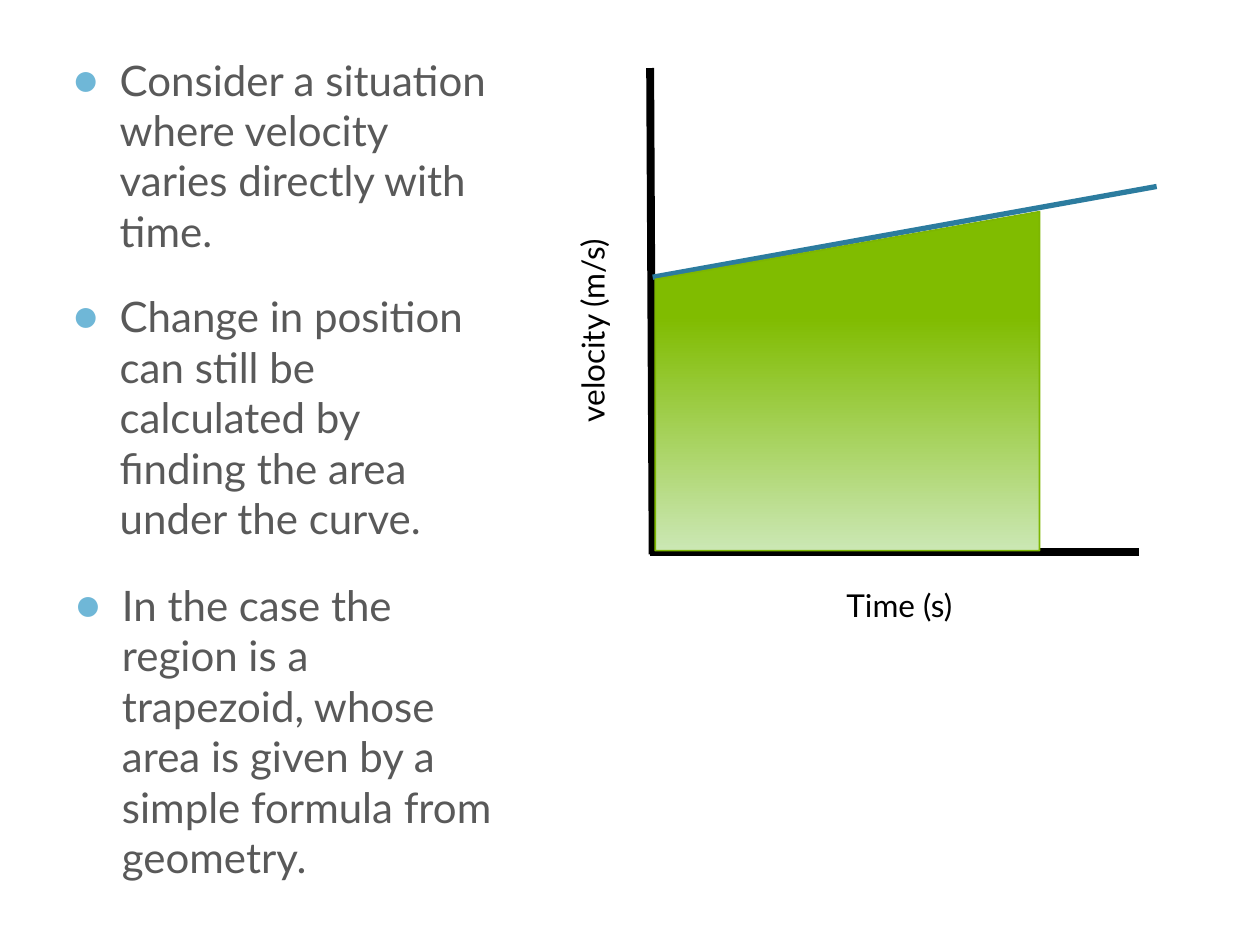
from dataclasses import dataclass

import pptx
import pptx.dml.color
import pptx.enum.shapes
import pptx.enum.text
import pptx.oxml
import pptx.oxml.ns
import pptx.util
from pptx.util import Inches


@dataclass(frozen=True)
class Theme:
    font: str = "Lato"
    body_size: int = 24
    label_size: int = 18
    body: str = "595959"
    bullet: str = "6FB7D7"
    axis: str = "000000"
    curve: str = "2C7C9F"
    area_top: str = "80BC00"
    area_bottom: str = "CBE7B4"
    area_edge: str = "7DB602"


THEME = Theme()

POINTS = [
    "Consider a situation where velocity varies directly with time.",
    "Change in position can still be calculated by finding the area under the curve.",
]
CONCLUSION = (
    "In the case the region is a trapezoid, whose area is given by "
    "a simple formula from geometry."
)


def rgb(value):
    return pptx.dml.color.RGBColor.from_string(value)


def write(paragraph, text, *, size, color, space_before=0):
    paragraph.space_before = pptx.util.Pt(space_before)
    run = paragraph.add_run()
    run.text = text
    run.font.name = THEME.font
    run.font.size = pptx.util.Pt(size)
    run.font.color.rgb = rgb(color)


def add_bullet(paragraph):
    """Give the paragraph a hanging indent and a coloured dot."""
    properties = paragraph._p.get_or_add_pPr()
    properties.set("marL", str(Inches(0.38)))
    properties.set("indent", str(Inches(-0.38)))
    namespace = pptx.oxml.ns.nsdecls("a")
    for xml in (
        f'<a:buClr {namespace}><a:srgbClr val="{THEME.bullet}"/></a:buClr>',
        f'<a:buSzPct {namespace} val="110000"/>',
        f'<a:buFont {namespace} typeface="Arial"/>',
        f'<a:buChar {namespace} char="●"/>',
    ):
        properties.append(pptx.oxml.parse_xml(xml))


def fill_list(holder, items):
    frame = holder.text_frame
    frame.word_wrap = True
    frame.auto_size = pptx.enum.text.MSO_AUTO_SIZE.NONE
    frame.vertical_anchor = pptx.enum.text.MSO_ANCHOR.TOP
    for index, item in enumerate(items):
        paragraph = frame.add_paragraph() if index else frame.paragraphs[0]
        write(paragraph, item, size=THEME.body_size, color=THEME.body, space_before=20)
        add_bullet(paragraph)


def add_line(slide, start, end, color, width):
    line = slide.shapes.add_connector(
        pptx.enum.shapes.MSO_CONNECTOR.STRAIGHT,
        *(Inches(value) for value in (*start, *end)),
    )
    line.line.color.rgb = rgb(color)
    line.line.width = pptx.util.Pt(width)
    line._element.spPr.append(
        pptx.oxml.parse_xml(f"<a:effectLst {pptx.oxml.ns.nsdecls('a')}/>")
    )


def add_axis_label(slide, text, left, top, width, rotation=0):
    label = slide.shapes.add_textbox(
        Inches(left), Inches(top), Inches(width), Inches(0.4)
    )
    label.rotation = rotation
    label.text_frame.word_wrap = False
    label.text_frame.auto_size = pptx.enum.text.MSO_AUTO_SIZE.SHAPE_TO_FIT_TEXT
    write(
        label.text_frame.paragraphs[0], text, size=THEME.label_size, color=THEME.axis
    )


def add_area(slide):
    """Shade the trapezoid under the velocity curve."""
    area = slide.shapes.add_shape(
        pptx.enum.shapes.MSO_SHAPE.FLOWCHART_MANUAL_INPUT,
        Inches(5.2), Inches(1.68), Inches(3.05), Inches(2.69),
    )
    area.shadow.inherit = False
    area.fill.gradient()
    area.fill.gradient_angle = 270
    stops = ((0.31, THEME.area_top), (1, THEME.area_bottom))
    for stop, (position, color) in zip(area.fill.gradient_stops, stops):
        stop.position = position
        stop.color.rgb = rgb(color)
    area.line.color.rgb = rgb(THEME.area_edge)
    area.line.width = pptx.util.Pt(1)


def add_graph(slide):
    add_line(slide, (5.16, 0.54), (5.18, 4.4), THEME.axis, 4.5)
    add_line(slide, (9.04, 4.38), (5.16, 4.38), THEME.axis, 4.5)
    add_axis_label(slide, "velocity (m/s)", 3.77, 2.32, 1.86, rotation=270)
    add_axis_label(slide, "Time (s)", 6.62, 4.6, 1.06)
    add_line(slide, (5.18, 2.2), (9.18, 1.48), THEME.curve, 3)
    add_area(slide)


def main():
    deck = pptx.Presentation()
    deck.slide_width, deck.slide_height = Inches(10), Inches(7.5)
    slide = deck.slides.add_slide(deck.slide_layouts[1])
    title = slide.shapes.title._element
    title.getparent().remove(title)

    body = slide.placeholders[1]
    body.left, body.top = Inches(0.47), Inches(0.38)
    body.width, body.height = Inches(3.54), Inches(4.22)
    fill_list(body, POINTS)

    add_graph(slide)

    conclusion = slide.shapes.add_textbox(
        Inches(0.49), Inches(4.55), Inches(3.54), Inches(2.9)
    )
    fill_list(conclusion, [CONCLUSION])
    deck.save("out.pptx")


if __name__ == "__main__":
    main()
